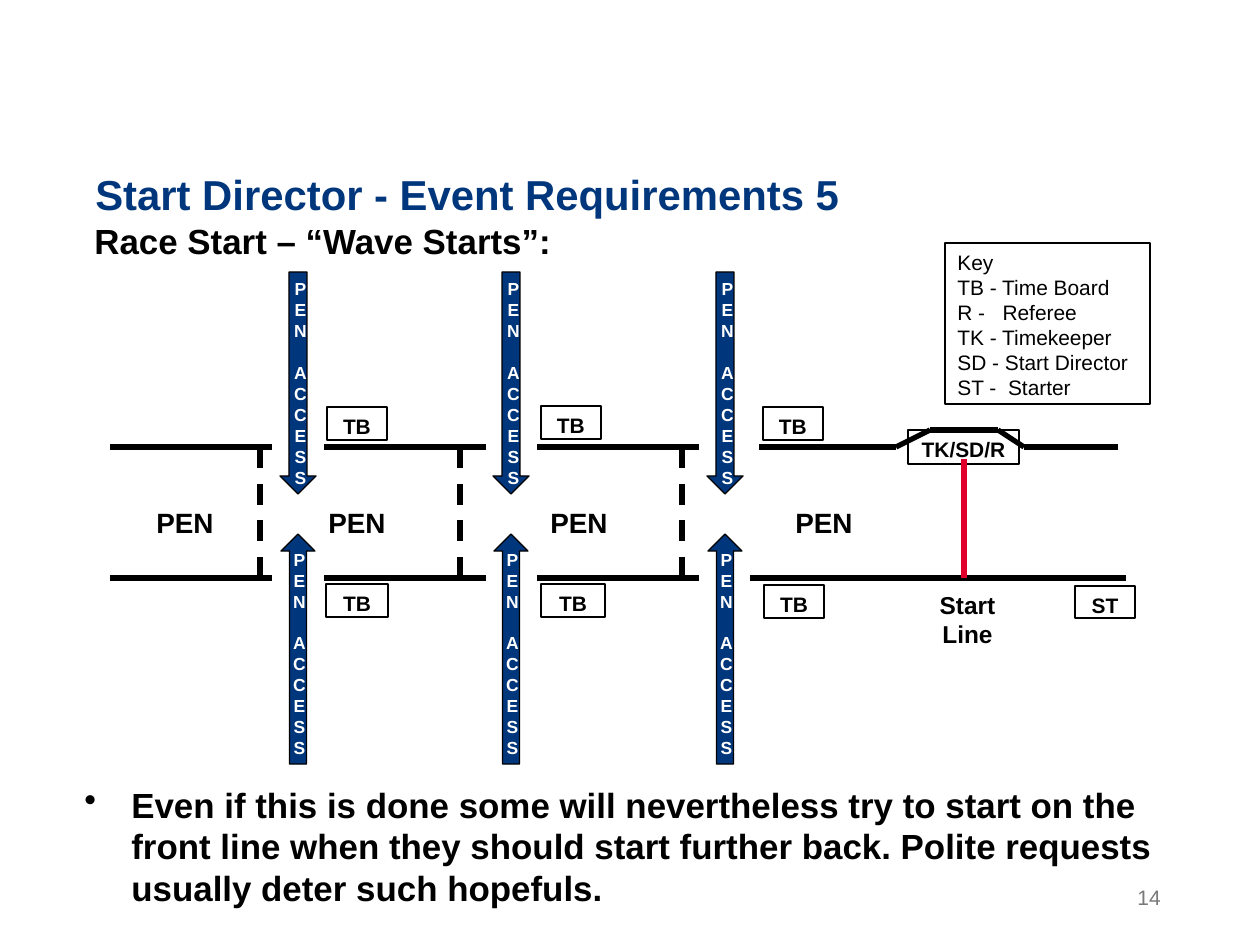
import itertools
import pptx
import pptx.util
import pptx.dml.color
import pptx.enum.dml
import pptx.enum.shapes
import pptx.enum.text
import pptx.oxml
import pptx.oxml.ns

PX = 7286
BLACK, NAVY, RED, GREY, WHITE = "000000", "00367C", "E1002C", "797979", "FFFFFF"
Pt = pptx.util.Pt
Kind = pptx.enum.shapes.MSO_SHAPE
Align = pptx.enum.text.PP_ALIGN
Anchor = pptx.enum.text.MSO_ANCHOR
color = pptx.dml.color.RGBColor.from_string
qn = pptx.oxml.ns.qn

deck = pptx.Presentation()
deck.slide_width, deck.slide_height = 1260 * PX, 941 * PX
slide = deck.slides.add_slide(deck.slide_layouts[6])


def put(box, lines, size, ink=BLACK, bold=True, align=Align.CENTER, kind=None, fill=None):
    """Add a text box, or an outlined shape when kind is given, and fill it with text."""
    place = [n * PX for n in box]
    if kind is None:
        shape = slide.shapes.add_textbox(*place)
    else:
        shape = slide.shapes.add_shape(kind, *place)
        shape.shadow.inherit = False
        shape.line.color.rgb = color(BLACK)
        shape.line.width = Pt(0.75)
        if fill:
            shape.fill.solid()
            shape.fill.fore_color.rgb = color(fill)
        else:
            shape.fill.background()
    frame = shape.text_frame
    frame.word_wrap = True
    frame.vertical_anchor = Anchor.TOP
    for i, words in enumerate(lines):
        para = frame.add_paragraph() if i else frame.paragraphs[0]
        para.alignment = align
        run = para.add_run()
        run.text = words
        font = run.font
        font.name, font.size, font.bold = "Arial", Pt(size), bold
        font.color.rgb = color(ink)
    return frame


def draw(start, end, ink=BLACK, dash=False):
    """Add a straight 3 pt line between two points."""
    line = slide.shapes.add_connector(pptx.enum.shapes.MSO_CONNECTOR.STRAIGHT,
                                      *[n * PX for n in start + end])
    line.line.color.rgb = color(ink)
    line.line.width = Pt(3)
    if dash:
        line.line.dash_style = pptx.enum.dml.MSO_LINE.DASH
    props = line.element.find(qn("p:spPr"))
    props.append(pptx.oxml.parse_xml(
        '<a:effectLst xmlns:a="http://schemas.openxmlformats.org/drawingml/2006/main"/>'))


# Headings and page number
title = put((83, 162, 777, 63), ["Start Director - Event Requirements 5"], 24, NAVY, align=Align.LEFT)
title.word_wrap = False
put((82, 213, 487, 55), ["Race Start – “Wave Starts”:"], 20, align=Align.LEFT)
page = put((890, 872, 283, 50), ["14"], 12, GREY, False, Align.RIGHT)
page.vertical_anchor = Anchor.MIDDLE

# Closing bullet
note = put((72, 777, 1100, 139), [
    "Even if this is done some will nevertheless try to start on the front line when "
    "they should start further back. Polite requests usually deter such hopefuls."],
    20, align=Align.LEFT)
props = note.paragraphs[0]._p.get_or_add_pPr()
props.set("marL", str(47 * PX))
props.set("indent", str(-47 * PX))
props.append(pptx.oxml.parse_xml(
    '<a:buChar xmlns:a="http://schemas.openxmlformats.org/drawingml/2006/main" char="•"/>'))

# Labelled boxes: time boards, starter, officials
boards = [(327, 407, 60), (541, 406, 60), (763, 407, 60),
          (326, 584, 62), (541, 584, 64), (764, 585, 60)]
for x, y, wide in boards:
    put((x, y, wide, 33), ["TB"], 12, kind=Kind.RECTANGLE)
put((1075, 586, 60, 32), ["ST"], 12, kind=Kind.RECTANGLE)
put((908, 430, 111, 34), ["TK/SD/R"], 12, kind=Kind.RECTANGLE)

# Course edges
TOP, LOW = 447, 578
pens = [(110, 272), (324, 486), (537, 699)]
for y, last in ((TOP, [(759, 896), (1024, 1118)]), (LOW, [(750, 1126)])):
    for left, right in pens + last:
        draw((left, y), (right, y))

# Bend around the officials
bend = [(896, TOP), (930, 430), (998, 430), (1024, TOP)]
for start, end in itertools.pairwise(bend):
    draw(start, end)

# Pen dividers and start line
for x in (260, 460, 682):
    draw((x, TOP), (x, LOW), dash=True)
draw((964, 459), (964, LOW), RED)
put((912, 584, 111, 60), ["Start Line"], 14)

# Pen names
for x in (134, 306, 528, 773):
    put((x, 499, 102, 39), ["PEN"], 16)

# Key
put((945, 243, 205, 161), ["Key", "TB - Time Board", "R -   Referee", "TK - Timekeeper",
                           "SD - Start Director", "ST -  Starter"],
    12, bold=False, align=Align.LEFT, kind=Kind.RECTANGLE)

# Access arrows, one letter to a line
for mid in (298, 511, 725):
    for kind, y, wide, tall, inset in ((Kind.DOWN_ARROW, 272, 36, 222, 5),
                                       (Kind.UP_ARROW, 534, 34, 230, 3)):
        frame = put((mid - wide // 2, y, wide, tall), ["PEN", "ACCESS"], 10, WHITE,
                    kind=kind, fill=NAVY)
        frame.margin_left, frame.margin_right = inset * PX, 0
        frame.paragraphs[1].space_before = Pt(12)

deck.save("out.pptx")
